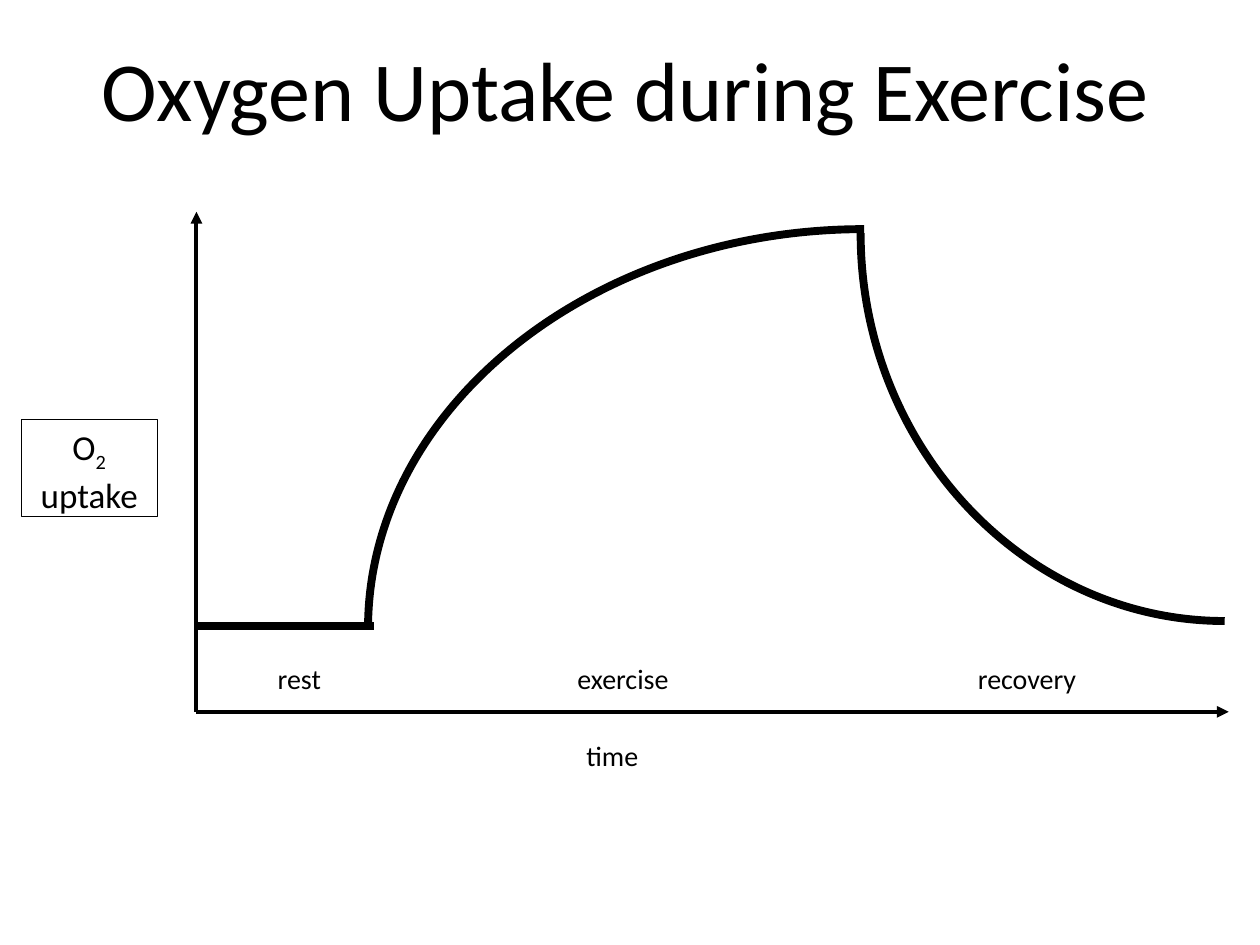
from lxml import etree
from pptx import Presentation
from pptx.dml.color import RGBColor
from pptx.enum.shapes import MSO_CONNECTOR, MSO_SHAPE
from pptx.enum.text import MSO_ANCHOR, PP_ALIGN
from pptx.oxml.ns import qn
from pptx.util import Cm, Pt

BLACK = RGBColor(0, 0, 0)
WHITE = RGBColor(255, 255, 255)
RECT = MSO_SHAPE.RECTANGLE
LINE = MSO_CONNECTOR.STRAIGHT
CENTER = PP_ALIGN.CENTER
TOP = MSO_ANCHOR.TOP
FONT = "Calibri"
BEND = 0.55

TITLE = ("Oxygen Uptake during Exercise", (0.91, 0.64, 23.39, 2.31))
LEFT, BASE = 3.96, 14.35
AXES = [
    ((LEFT, BASE), (LEFT, 4.27)),
    ((LEFT, BASE), (24.77, BASE)),
]
REST = ((LEFT, 12.62), (7.54, 12.62))
CURVES = [
    ((7.42, 12.67), (17.42, 4.62)),
    ((17.35, 4.7), (24.69, 12.52)),
]
ROW, HIGH = 13.21, 0.94
LABELS = [
    ("time", 10.44, 14.76, 3.81),
    ("rest", 4.55, ROW, 2.97),
    ("exercise", 10.87, ROW, 3.38),
    ("recovery", 18.9, ROW, 3.61),
]
UPTAKE = ([("O", False), ("2", True), (" uptake", False)], (0.43, 8.46, 2.74, 1.96))


def write(shape, runs, size):
    frame = shape.text_frame
    frame.word_wrap = True
    frame.vertical_anchor = TOP
    para = frame.paragraphs[0]
    para.alignment = CENTER
    for text, sub in runs:
        run = para.add_run()
        run.text = text
        run.font.name = FONT
        run.font.size = Pt(size)
        run.font.color.rgb = BLACK
        if sub:
            run.font._element.set("baseline", "-25000")


def add_box(slide, runs, place, size, edge):
    box = slide.shapes.add_shape(RECT, *map(Cm, place))
    box.shadow.inherit = False
    box.fill.solid()
    box.fill.fore_color.rgb = WHITE
    box.line.color.rgb = edge
    box.line.width = Pt(0.75)
    write(box, runs, size)


def add_line(slide, ends, width, arrow=False):
    start, end = ends
    line = slide.shapes.add_connector(LINE, *map(Cm, start + end))
    line.line.color.rgb = BLACK
    line.line.width = Pt(width)
    props = line._element.spPr
    if arrow:
        etree.SubElement(props.find(qn("a:ln")), qn("a:tailEnd"), type="triangle")
    etree.SubElement(props, qn("a:effectLst"))


def add_curve(slide, ends):
    (x0, y0), (x1, y1) = ends
    points = [(x0, y0 + BEND * (y1 - y0)), (x1 - BEND * (x1 - x0), y1), (x1, y1)]
    build = slide.shapes.build_freeform(Cm(x0), Cm(y0))
    build.add_line_segments([(Cm(x), Cm(y)) for x, y in points], close=False)
    curve = build.convert_to_shape()
    curve.shadow.inherit = False
    curve.fill.background()
    curve.line.color.rgb = BLACK
    curve.line.width = Pt(4.5)
    trace = next(curve._element.iter(qn("a:path")))
    bezier = etree.SubElement(trace, qn("a:cubicBezTo"))
    for step in trace.findall(qn("a:lnTo")):
        bezier.append(step[0])
        trace.remove(step)


def main():
    deck = Presentation()
    deck.slide_width, deck.slide_height = Cm(25.4), Cm(19.05)
    slide = deck.slides.add_slide(deck.slide_layouts[6])
    for ends in AXES:
        add_line(slide, ends, 2.25, True)
    add_line(slide, REST, 4.5)
    for ends in CURVES:
        add_curve(slide, ends)
    text, place = TITLE
    write(slide.shapes.add_textbox(*map(Cm, place)), [(text, False)], 48)
    for text, x, y, wide in LABELS:
        add_box(slide, [(text, False)], (x, y, wide, HIGH), 16, WHITE)
    runs, place = UPTAKE
    add_box(slide, runs, place, 20, BLACK)
    deck.save("out.pptx")


if __name__ == "__main__":
    main()
